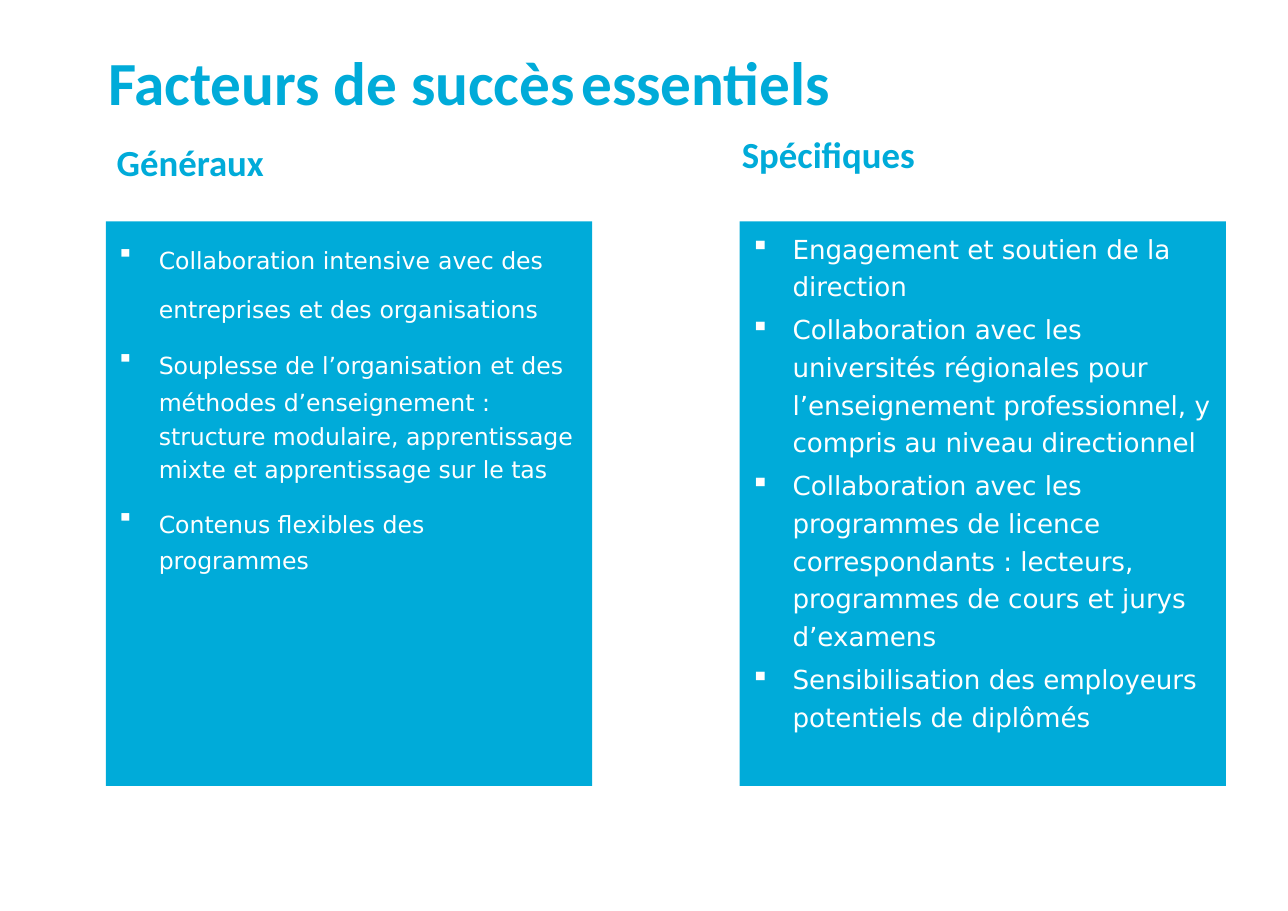
import dataclasses

import lxml.etree
import pptx
import pptx.dml.color
import pptx.enum.shapes
import pptx.enum.text
import pptx.oxml.ns
import pptx.util

Cm = pptx.util.Cm
Pt = pptx.util.Pt


@dataclasses.dataclass(frozen=True)
class Style:
    """Text format of one kind of span."""
    size: float
    face: str
    color: str
    bold: bool = False


@dataclasses.dataclass(frozen=True)
class Theme:
    """Colours and type sizes of the slide."""
    panel: str = "00ABD9"
    title: Style = Style(40, "Calibri", "00ABD9", True)
    title_gap: Style = Style(18, "Calibri", "000000")
    heading: Style = Style(24, "Calibri", "00ABD9", True)
    general: Style = Style(15.4, "DejaVu Sans", "FFFFFF")
    specific: Style = Style(17.1, "DejaVu Sans", "FFFFFF")
    item_gap: Style = Style(22.4, "Calibri", "000000")


THEME = Theme()

GENERAL = [
    ["Collaboration intensive", "avec des", "entreprises", "et des", "organisations"],
    ["Souplesse de l’organisation",
     "et des méthodes d’enseignement : structure modulaire, "
     "apprentissage mixte et apprentissage sur le tas"],
    ["Contenus flexibles des", "programmes"],
]
SPECIFIC = [
    ["Engagement et soutien de la direction"],
    ["Collaboration avec les universités régionales pour l’enseignement "
     "professionnel, y compris au niveau directionnel"],
    ["Collaboration avec les programmes de licence correspondants : "
     "lecteurs, programmes de cours et jurys d’examens"],
    ["Sensibilisation des employeurs potentiels de diplômés"],
]


def add_span(para, text, style):
    """Append a formatted span to a paragraph."""
    span = para.add_run()
    span.text = text
    span.font.size = Pt(style.size)
    span.font.name = style.face
    span.font.bold = style.bold
    span.font.color.rgb = pptx.dml.color.RGBColor.from_string(style.color)


def add_phrases(para, phrases, style, gap):
    """Write phrases in one style, parted by spaces in another."""
    for index, phrase in enumerate(phrases):
        if index:
            add_span(para, " ", gap)
        add_span(para, phrase, style)


def set_bullet(para):
    """Give a paragraph a square bullet with a hanging indent."""
    properties = para._p.get_or_add_pPr()
    properties.set("marL", str(Cm(0.97)))
    properties.set("indent", str(-Cm(0.97)))
    bullet = lxml.etree.SubElement(properties, pptx.oxml.ns.qn("a:buChar"))
    bullet.set("char", "▪")


def set_frame(frame):
    """Make a text frame wrap, start at the top and keep its size."""
    frame.word_wrap = True
    frame.auto_size = pptx.enum.text.MSO_AUTO_SIZE.NONE
    frame.vertical_anchor = pptx.enum.text.MSO_ANCHOR.TOP


def add_title(page, left, top, width, height):
    """Place the slide title in its placeholder."""
    box = page.shapes.title
    box.left, box.top, box.width, box.height = left, top, width, height
    set_frame(box.text_frame)
    para = box.text_frame.paragraphs[0]
    para.alignment = pptx.enum.text.PP_ALIGN.LEFT
    para.line_spacing = 1.0
    add_phrases(para, ["Facteurs de succès", "essentiels"], THEME.title, THEME.title_gap)


def add_heading(page, text, left, top):
    """Place a column heading."""
    box = page.shapes.add_textbox(left, top, Cm(8), Cm(1.27))
    set_frame(box.text_frame)
    add_span(box.text_frame.paragraphs[0], text, THEME.heading)


def add_panel(page, items, style, left, top, width, height):
    """Place a filled panel with a bulleted list."""
    box = page.shapes.add_shape(
        pptx.enum.shapes.MSO_SHAPE.RECTANGLE, left, top, width, height)
    box.shadow.inherit = False
    box.fill.solid()
    box.fill.fore_color.rgb = pptx.dml.color.RGBColor.from_string(THEME.panel)
    box.line.fill.background()
    frame = box.text_frame
    set_frame(frame)
    for index, phrases in enumerate(items):
        para = frame.add_paragraph() if index else frame.paragraphs[0]
        para.alignment = pptx.enum.text.PP_ALIGN.LEFT
        para.line_spacing = 1.2
        largest = THEME.item_gap if len(phrases) > 1 else style
        para.space_before = Pt(round(largest.size * 0.2, 1))
        set_bullet(para)
        add_phrases(para, phrases, style, THEME.item_gap)


def add_factors(page, left, top, width, height):
    """Place both columns of success factors."""
    panel_width = Cm(11.2)
    right = left + width - panel_width
    add_panel(page, GENERAL, THEME.general, left, top, panel_width, height)
    add_panel(page, SPECIFIC, THEME.specific, right, top, panel_width, height)
    add_heading(page, "Généraux", left, top - Cm(2))
    add_heading(page, "Spécifiques", right - Cm(0.2), top - Cm(2.2))


def main():
    """Build and save the deck."""
    deck = pptx.Presentation()
    deck.slide_width, deck.slide_height = Cm(29.67), Cm(20.98)
    page = deck.slides.add_slide(deck.slide_layouts.get_by_name("Title Only"))
    add_title(page, Cm(2.24), Cm(0.9), Cm(24), Cm(1.96))
    add_factors(page, Cm(2.44), Cm(5.1), Cm(25.8), Cm(13))
    deck.save("out.pptx")


if __name__ == "__main__":
    main()
